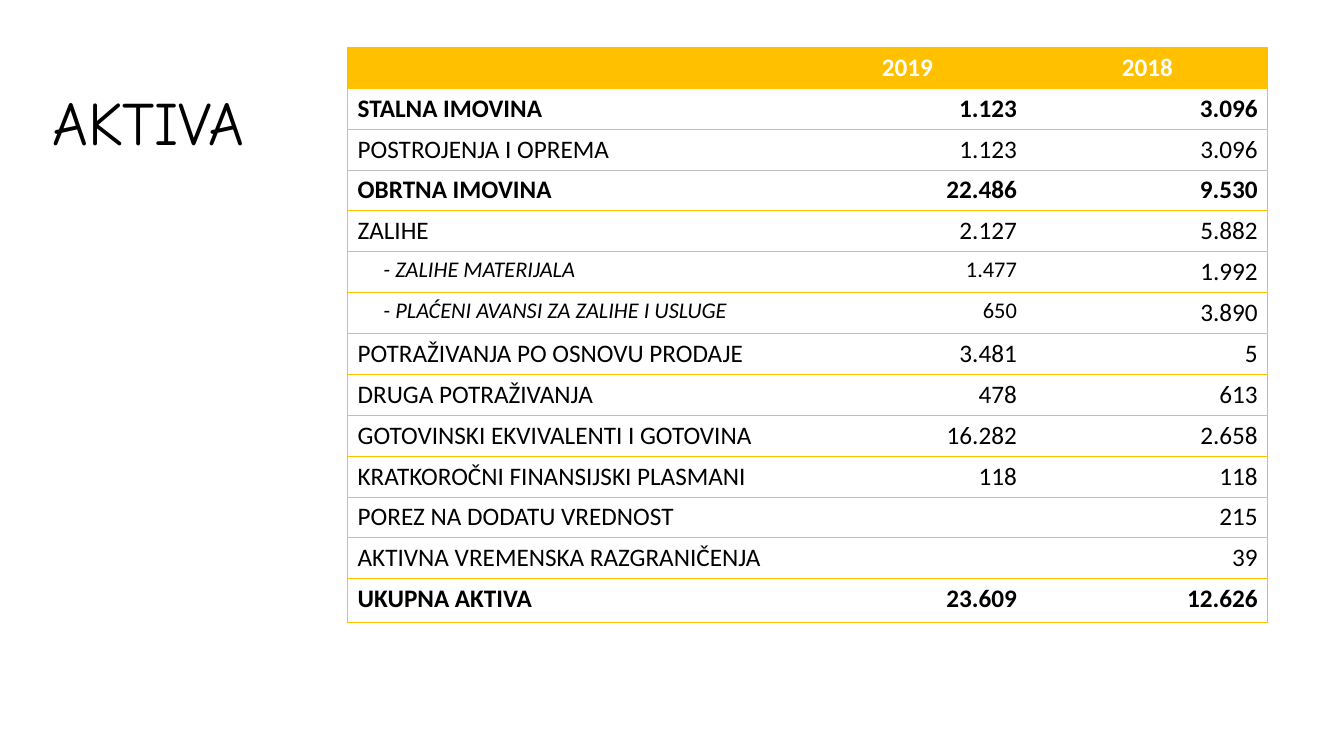
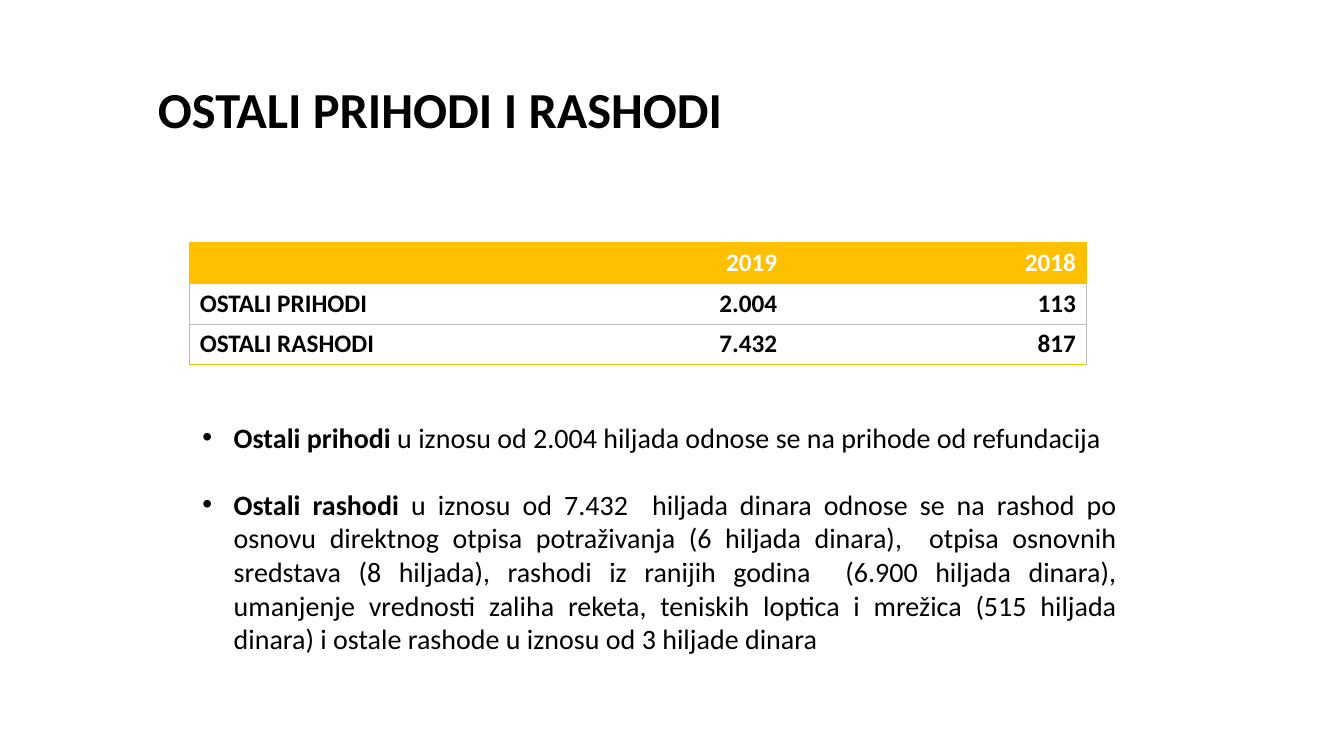
from lxml.etree import SubElement
from pptx import Presentation
from pptx.dml.color import RGBColor
from pptx.enum.text import MSO_ANCHOR, PP_ALIGN
from pptx.oxml.ns import qn
from pptx.util import Cm, Pt

COLOURS = {"gold": "FFC000", "grey": "BFBFBF", "black": "000000", "white": "FFFFFF"}
FONT = "Calibri"
TITLE_SIZE = (29.21, 3.68)
ROW_HEIGHT = 1.03
BULLET_INDENT = 0.79

STYLES = {
    "total": {"bold": True},
    "item": {},
    "detail": {"size": 16},
}

ASSETS = {
    "place": (8.76, 1.19),
    "columns": (11.1, 6.02, 6.07),
    "last_row": 1.1,
    "header_align": PP_ALIGN.CENTER,
    "right_edge": "gold",
    "rows": [
        ("STALNA IMOVINA", "1.123", "3.096", "total", "grey"),
        ("POSTROJENJA I OPREMA", "1.123", "3.096", "item", "grey"),
        ("OBRTNA IMOVINA", "22.486", "9.530", "total", "gold"),
        ("ZALIHE", "2.127", "5.882", "item", "grey"),
        ("- ZALIHE MATERIJALA", "1.477", "1.992", "detail", "gold"),
        ("- PLAĆENI AVANSI ZA ZALIHE I USLUGE", "650", "3.890", "detail", "grey"),
        ("POTRAŽIVANJA PO OSNOVU PRODAJE", "3.481", "5", "item", "gold"),
        ("DRUGA POTRAŽIVANJA", "478", "613", "item", "grey"),
        ("GOTOVINSKI EKVIVALENTI I GOTOVINA", "16.282", "2.658", "item", "gold"),
        ("KRATKOROČNI FINANSIJSKI PLASMANI", "118", "118", "item", "grey"),
        ("POREZ NA DODATU VREDNOST", "", "215", "item", "grey"),
        ("AKTIVNA VREMENSKA RAZGRANIČENJA", "", "39", "item", "gold"),
        ("UKUPNA AKTIVA", "23.609", "12.626", "total", "gold"),
    ],
}

OTHER = {
    "place": (4.78, 6.1),
    "columns": (7.53, 7.53, 7.53),
    "last_row": ROW_HEIGHT,
    "header_align": PP_ALIGN.RIGHT,
    "right_edge": "grey",
    "rows": [
        ("OSTALI PRIHODI", "2.004", "113", "total", "grey"),
        ("OSTALI RASHODI", "7.432", "817", "total", "gold"),
    ],
}

NOTES = [
    ("Ostali prihodi",
     " u iznosu od 2.004 hiljada odnose se na prihode od refundacija",
     PP_ALIGN.LEFT),
    ("Ostali rashodi ",
     "u iznosu od 7.432  hiljada dinara odnose se na rashod po osnovu direktnog "
     "otpisa potraživanja (6 hiljada dinara),  otpisa osnovnih sredstava (8 hiljada), "
     "rashodi iz ranijih godina  (6.900 hiljada dinara), umanjenje vrednosti zaliha "
     "reketa, teniskih loptica i mrežica (515 hiljada dinara) i ostale rashode "
     "u iznosu od 3 hiljade dinara",
     PP_ALIGN.JUSTIFY),
]


def add_span(para, text, size=18, bold=False, italic=False, colour="black", font=FONT):
    span = para.add_run()
    span.text = text
    span.font.size = Pt(size)
    span.font.bold = bold
    span.font.italic = italic
    span.font.name = font
    span.font.color.rgb = RGBColor.from_string(COLOURS[colour])


def add_box(page, left, top, width, height):
    box = page.shapes.add_textbox(Cm(left), Cm(top), Cm(width), Cm(height))
    box.text_frame.word_wrap = True
    return box.text_frame


def add_title(page, text, left, top, **look):
    frame = add_box(page, left, top, *TITLE_SIZE)
    frame.vertical_anchor = MSO_ANCHOR.MIDDLE
    para = frame.paragraphs[0]
    para.line_spacing = 0.9
    add_span(para, text, **look)


def indent(para, left, first=0):
    properties = para._p.get_or_add_pPr()
    properties.set("marL", str(Cm(left)))
    properties.set("indent", str(Cm(first)))
    return properties


def set_borders(cell, left, right, top, bottom):
    properties = cell._tc.get_or_add_tcPr()
    for tag, colour in zip(("lnL", "lnR", "lnT", "lnB"), (left, right, top, bottom)):
        line = SubElement(properties, qn(f"a:{tag}"), w=str(Pt(0.5)))
        if colour:
            fill = SubElement(line, qn("a:solidFill"))
            SubElement(fill, qn("a:srgbClr"), val=COLOURS[colour])
        else:
            SubElement(line, qn("a:noFill"))


def add_statement(page, statement):
    columns = statement["columns"]
    rows = [("", "2019", "2018", "total", "gold")] + statement["rows"]
    heights = [ROW_HEIGHT] * (len(rows) - 1) + [statement["last_row"]]
    left, top = statement["place"]
    table = page.shapes.add_table(len(rows), len(columns), Cm(left), Cm(top),
                                  Cm(sum(columns)), Cm(sum(heights))).table
    table.horz_banding = False
    table.first_row = False
    for column, width in zip(table.columns, columns):
        column.width = Cm(width)
    for row, height in zip(table.rows, heights):
        row.height = Cm(height)

    last = len(columns) - 1
    line_above = "gold"
    for row_index, (*texts, style, line_below) in enumerate(rows):
        header = row_index == 0
        for column_index, text in enumerate(texts):
            cell = table.cell(row_index, column_index)
            left_edge = "gold" if header else "grey"
            right_edge = "gold" if header else statement["right_edge"]
            set_borders(cell,
                        left_edge if column_index == 0 else None,
                        right_edge if column_index == last else None,
                        line_above, line_below)
            cell.fill.solid()
            cell.fill.fore_color.rgb = RGBColor.from_string(
                COLOURS["gold" if header else "white"])
            para = cell.text_frame.paragraphs[0]
            look = dict(STYLES[style], colour="white" if header else "black")
            if column_index:
                para.alignment = statement["header_align"] if header else PP_ALIGN.RIGHT
            elif style == "detail":
                indent(para, 0.65)
                look["italic"] = True
            if column_index == last:
                look["size"] = 18
            if text:
                add_span(para, text, **look)
        line_above = line_below


def add_notes(page):
    frame = add_box(page, 4.85, 10.46, 23.55, 6.25)
    for index, (lead, rest, alignment) in enumerate(NOTES):
        para = frame.add_paragraph() if index else frame.paragraphs[0]
        para.alignment = alignment
        para.space_before = Pt(24 if index else 0)
        properties = indent(para, BULLET_INDENT, -BULLET_INDENT)
        SubElement(properties, qn("a:buFont"), typeface="Arial")
        SubElement(properties, qn("a:buChar"), char="•")
        add_span(para, lead, size=20, bold=True)
        add_span(para, rest, size=20)


def main():
    deck = Presentation()
    deck.slide_width, deck.slide_height = Cm(33.87), Cm(19.05)
    blank = deck.slide_layouts[6]

    page = deck.slides.add_slide(blank)
    add_title(page, "AKTIVA", 1.07, 1.32, size=44, font="Comic Neue")
    add_statement(page, ASSETS)

    page = deck.slides.add_slide(blank)
    add_title(page, "OSTALI PRIHODI I RASHODI", 3.73, 0.99, size=36, bold=True)
    add_statement(page, OTHER)
    add_notes(page)

    deck.save("out.pptx")


if __name__ == "__main__":
    main()
